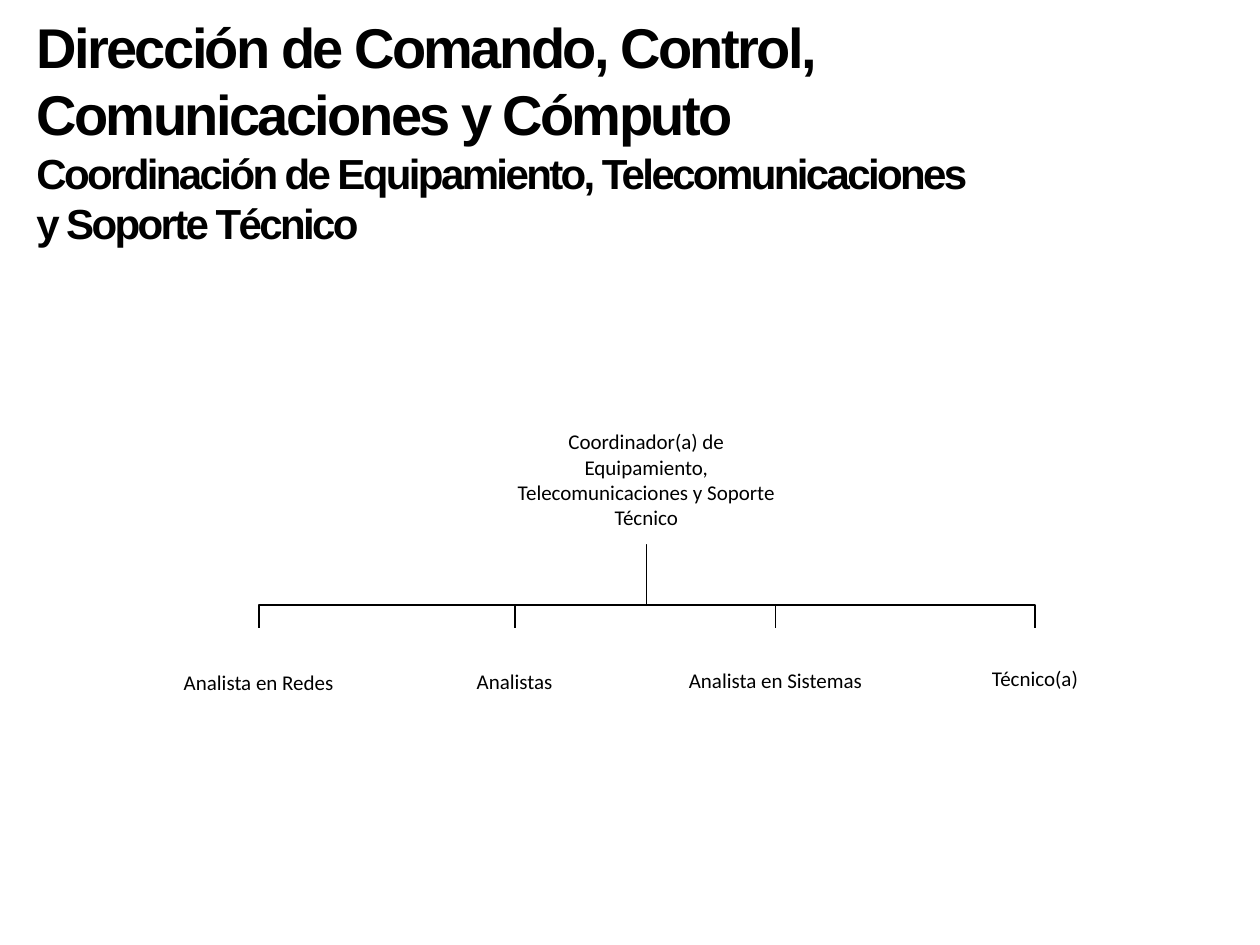
from pptx import Presentation
from pptx import util as u
from pptx.dml.color import RGBColor
from pptx.enum import shapes, text

BLACK = RGBColor(0, 0, 0)
WHITE = RGBColor(255, 255, 255)

TITLE_LINES = [
    ("Dirección de Comando, Control, Comunicaciones y Cómputo", 32),
    ("Coordinación de Equipamiento, Telecomunicaciones y Soporte Técnico", 24),
]
COORDINATOR = "Coordinador(a) de Equipamiento, Telecomunicaciones y Soporte Técnico"
COORDINATOR_PLACE = (10.16, 8.36, 5.74, 2.61)
# label, left, height, line spacing
TEAM = [
    ("Analista en Redes", 3.07, 2.18, 1),
    ("Analistas", 8.23, 2.13, 1),
    ("Analista en Sistemas", 13.49, 2.08, 1),
    ("Técnico(a)", 18.72, 2.08, 0.9),
]
TEAM_TOP, TEAM_WIDTH = 12.67, 4.29
BUS_TOP = 12.19


class OrgChart:
    title_font = "Arial"
    label_font = "Calibri"
    label_size = u.Pt(12)
    letter_spacing = "-150"
    inset = u.Cm(0.03)

    def __init__(self, slide):
        self.slide = slide

    def title(self, lines, left, top, width, height):
        shape = self.slide.shapes.title
        shape.left, shape.top = u.Cm(left), u.Cm(top)
        shape.width, shape.height = u.Cm(width), u.Cm(height)
        frame = shape.text_frame
        frame.auto_size = text.MSO_AUTO_SIZE.NONE
        frame.vertical_anchor = text.MSO_ANCHOR.TOP
        frame.text = "\n".join(line for line, _ in lines)
        for paragraph, (_, size) in zip(frame.paragraphs, lines):
            paragraph.alignment = text.PP_ALIGN.LEFT
            self.set_font(paragraph, self.title_font, u.Pt(size), True)
            for run in paragraph.runs:
                run._r.get_or_add_rPr().set("spc", self.letter_spacing)

    def set_font(self, paragraph, name, size, bold=False):
        font = paragraph.font
        font.name, font.size, font.bold = name, size, bold
        font.color.rgb = BLACK

    def box(self, label, left, top, width, height, line_spacing=1):
        shape = self.slide.shapes.add_shape(
            shapes.MSO_SHAPE.RECTANGLE,
            u.Cm(left), u.Cm(top), u.Cm(width), u.Cm(height))
        shape.shadow.inherit = False
        shape.fill.solid()
        shape.fill.fore_color.rgb = WHITE
        shape.line.fill.background()
        frame = shape.text_frame
        frame.word_wrap = True
        frame.vertical_anchor = text.MSO_ANCHOR.MIDDLE
        frame.margin_left = frame.margin_right = self.inset
        frame.margin_top = frame.margin_bottom = self.inset
        frame.text = label
        paragraph = frame.paragraphs[0]
        paragraph.alignment = text.PP_ALIGN.CENTER
        paragraph.line_spacing = line_spacing
        self.set_font(paragraph, self.label_font, self.label_size)

    def branch(self, start_x, start_y, bend_y, end_x, end_y):
        """Draw a line down, across at bend_y, and down again."""
        builder = self.slide.shapes.build_freeform(u.Cm(start_x), u.Cm(start_y))
        corners = [(start_x, bend_y), (end_x, bend_y), (end_x, end_y)]
        builder.add_line_segments(
            [(u.Cm(x), u.Cm(y)) for x, y in corners], close=False)
        shape = builder.convert_to_shape()
        shape.shadow.inherit = False
        shape.fill.background()
        shape.line.color.rgb = BLACK
        shape.line.width = u.Pt(1)


def main():
    presentation = Presentation()
    presentation.slide_width, presentation.slide_height = u.Cm(25.4), u.Cm(19.05)
    slide = presentation.slides.add_slide(presentation.slide_layouts[5])
    chart = OrgChart(slide)
    chart.title(TITLE_LINES, 0.48, 0.13, 19.69, 5.05)

    left, top, width, height = COORDINATOR_PLACE
    for _, member_left, _, _ in reversed(TEAM):
        chart.branch(left + width / 2, top + height, BUS_TOP,
                     member_left + TEAM_WIDTH / 2, TEAM_TOP)
    chart.box(COORDINATOR, *COORDINATOR_PLACE)
    for label, member_left, member_height, line_spacing in TEAM:
        chart.box(label, member_left, TEAM_TOP, TEAM_WIDTH, member_height,
                  line_spacing)
    presentation.save("out.pptx")


if __name__ == "__main__":
    main()
